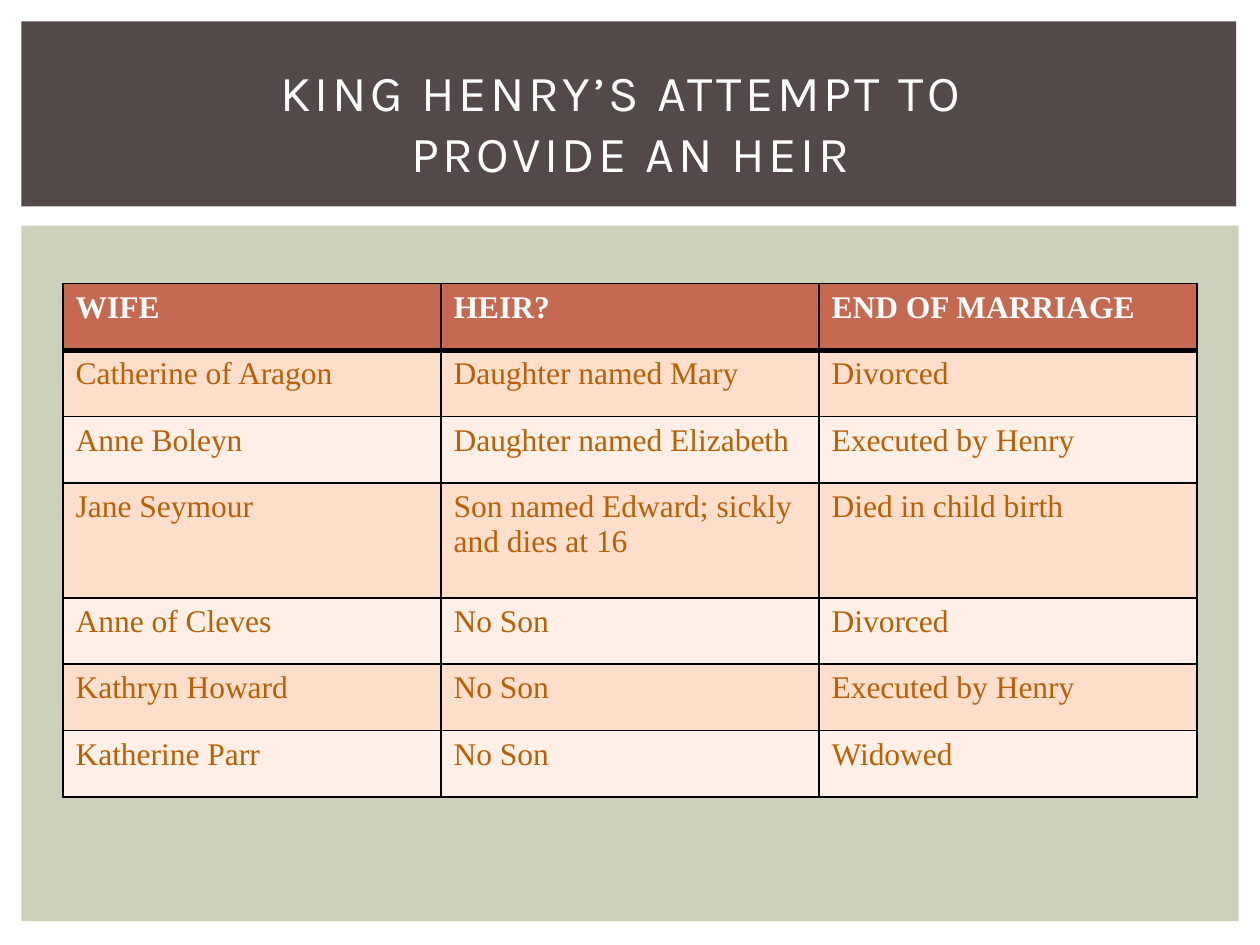
from copy import deepcopy

from lxml.etree import SubElement
from pptx import Presentation
from pptx.dml.color import RGBColor
from pptx.enum.shapes import MSO_SHAPE
from pptx.enum.text import MSO_ANCHOR, MSO_AUTO_SIZE, PP_ALIGN
from pptx.oxml.ns import qn
from pptx.util import Cm, Pt

TITLE_LINES = ["KING HENRY’S ATTEMPT TO ", "PROVIDE AN HEIR"]
MARRIAGES = [
    ("WIFE", "HEIR?", "END OF MARRIAGE"),
    ("Catherine of Aragon", "Daughter named Mary", "Divorced"),
    ("Anne Boleyn", "Daughter named Elizabeth", "Executed by Henry"),
    ("Jane Seymour", "Son named Edward; sickly and dies at 16", "Died in child birth"),
    ("Anne of Cleves", "No Son", "Divorced"),
    ("Kathryn Howard", "No Son", "Executed by Henry"),
    ("Katherine Parr", "No Son", "Widowed"),
]
COLUMN_WIDTH, ROW_HEIGHT, TALL_ROW_HEIGHT = Cm(7.62), Cm(1.34), Cm(2.31)
TALL_ROW = 3


def paint(fill, color):
    """Give a fill one solid colour."""
    fill.solid()
    fill.fore_color.rgb = RGBColor.from_string(color)


def style_run(run, font_name, size, color, bold=False):
    """Set the typeface, size, colour and weight of a run."""
    run.font.name = font_name
    run.font.size = Pt(size)
    run.font.bold = bold
    run.font.color.rgb = RGBColor.from_string(color)


def add_panel(slide, left, top, width, height, color):
    """Add a plain background rectangle."""
    panel = slide.shapes.add_shape(MSO_SHAPE.RECTANGLE, left, top, width, height)
    panel.shadow.inherit = False
    paint(panel.fill, color)
    panel.line.fill.background()


def add_title(slide):
    """Place the title above the panels and write its two spaced lines."""
    title = slide.shapes.title
    slide.shapes.element.append(title.element)
    title.left, title.top, title.width, title.height = Cm(1.06), Cm(1), Cm(23.3), Cm(2.92)
    frame = title.text_frame
    frame.word_wrap = True
    frame.auto_size = MSO_AUTO_SIZE.NONE
    frame.vertical_anchor = MSO_ANCHOR.MIDDLE
    paragraph = frame.paragraphs[0]
    paragraph.alignment = PP_ALIGN.CENTER
    for index, line in enumerate(TITLE_LINES):
        if index:
            paragraph.add_line_break()
        run = paragraph.add_run()
        run.text = line
        style_run(run, "Karla", 28.8, "FFFFFF")
        properties = run.font._element
        properties.set("spc", "200")
    for line_break in paragraph._p.findall(qn("a:br")):
        line_break.insert(0, deepcopy(properties))


def add_border(cell, side, points):
    """Draw one black cell edge."""
    edge = SubElement(cell._tc.get_or_add_tcPr(), qn(f"a:ln{side}"), w=str(Pt(points)))
    SubElement(SubElement(edge, qn("a:solidFill")), qn("a:srgbClr"), val="000000")


def fill_cell(cell, text, row):
    """Write and style one table cell according to its row."""
    is_header = row == 0
    run = cell.text_frame.paragraphs[0].add_run()
    run.text = text
    style_run(run, "Times New Roman", 18, "FFFFFF" if is_header else "BB5F03", is_header)
    add_border(cell, "L", 1)
    add_border(cell, "R", 1)
    add_border(cell, "T", 3 if row == 1 else 1)
    add_border(cell, "B", 3 if is_header else 1)
    band = "FFDECB" if row % 2 else "FFEFE7"
    paint(cell.fill, "C66951" if is_header else band)


def add_marriage_table(slide):
    """Add the table of wives, heirs and endings."""
    columns = len(MARRIAGES[0])
    table = slide.shapes.add_table(
        len(MARRIAGES), columns, Cm(1.27), Cm(5.72),
        COLUMN_WIDTH * columns, ROW_HEIGHT * (len(MARRIAGES) - 1) + TALL_ROW_HEIGHT,
    ).table
    for column in table.columns:
        column.width = COLUMN_WIDTH
    for row, marriage in enumerate(MARRIAGES):
        table.rows[row].height = TALL_ROW_HEIGHT if row == TALL_ROW else ROW_HEIGHT
        for column, text in enumerate(marriage):
            fill_cell(table.cell(row, column), text, row)


def main():
    """Build and save the slide."""
    presentation = Presentation()
    presentation.slide_width, presentation.slide_height = Cm(25.4), Cm(19.05)
    slide = presentation.slides.add_slide(presentation.slide_layouts[5])
    paint(slide.background.fill, "FFFFFF")
    add_panel(slide, Cm(0.43), Cm(4.55), Cm(24.54), Cm(14.02), "CCD1B9")
    add_panel(slide, Cm(0.43), Cm(0.43), Cm(24.49), Cm(3.73), "534949")
    add_marriage_table(slide)
    add_title(slide)
    presentation.save("out.pptx")


if __name__ == "__main__":
    main()
